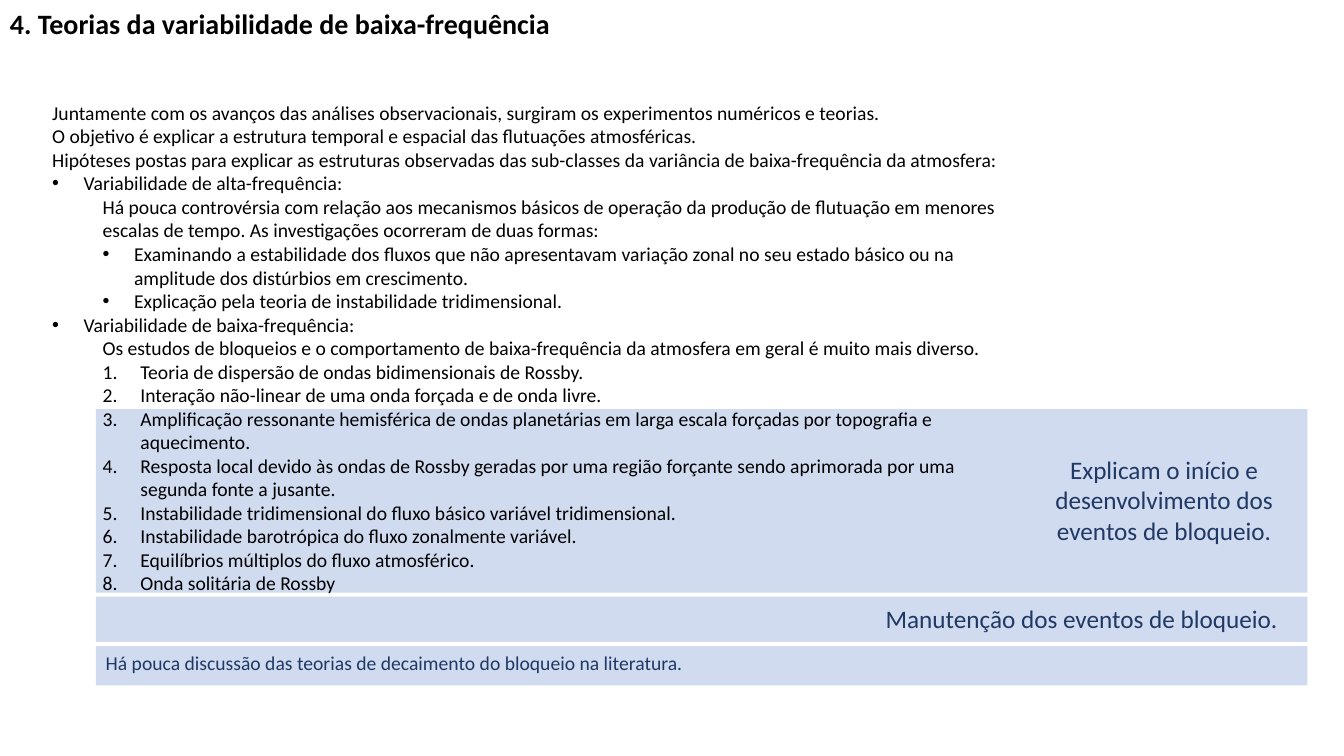
from lxml import etree
from pptx import Presentation
from pptx.dml.color import RGBColor
from pptx.enum.shapes import MSO_SHAPE
from pptx.enum.text import MSO_AUTO_SIZE, PP_ALIGN
from pptx.oxml.ns import qn
from pptx.util import Pt

RECTANGLE = MSO_SHAPE.RECTANGLE
LEFT, CENTER = PP_ALIGN.LEFT, PP_ALIGN.CENTER
BLACK = RGBColor(0x00, 0x00, 0x00)
NAVY = RGBColor(0x20, 0x38, 0x64)
BLUE = RGBColor(0x44, 0x72, 0xC4)
FONT = "Calibri"
BAND_OPACITY = 25

TITLE = "4. Teorias da variabilidade de baixa-frequência"

# Paragraph style: (level, left margin, hanging indent, bullet)
STYLES = {
    "plain": (0, 0, 0, None),
    "topic": (0, 22.5, 22.5, "•"),
    "detail": (1, 36, 0, None),
    "point": (1, 58.5, 22.5, "•"),
    "theory": (1, 63, 27, "number"),
}

BODY = [
    ("plain", "Juntamente com os avanços das análises observacionais, surgiram os experimentos numéricos e teorias."),
    ("plain", "O objetivo é explicar a estrutura temporal e espacial das flutuações atmosféricas."),
    ("plain", "Hipóteses postas para explicar as estruturas observadas das sub-classes da variância de "
              "baixa-frequência da atmosfera:"),
    ("topic", "Variabilidade de alta-frequência:"),
    ("detail", "Há pouca controvérsia com relação aos mecanismos básicos de operação da produção de flutuação "
               "em menores escalas de tempo. As investigações ocorreram de duas formas:"),
    ("point", "Examinando a estabilidade dos fluxos que não apresentavam variação zonal no seu estado básico "
              "ou na amplitude dos distúrbios em crescimento."),
    ("point", "Explicação pela teoria de instabilidade tridimensional."),
    ("topic", "Variabilidade de baixa-frequência:"),
    ("detail", "Os estudos de bloqueios e o comportamento de baixa-frequência da atmosfera em geral é muito "
               "mais diverso."),
    ("theory", "Teoria de dispersão de ondas bidimensionais de Rossby."),
    ("theory", "Interação não-linear de uma onda forçada e de onda livre."),
    ("theory", "Amplificação ressonante hemisférica de ondas planetárias em larga escala forçadas por "
               "topografia e aquecimento."),
    ("theory", "Resposta local devido às ondas de Rossby geradas por uma região forçante sendo aprimorada "
               "por uma segunda fonte a jusante."),
    ("theory", "Instabilidade tridimensional do fluxo básico variável tridimensional."),
    ("theory", "Instabilidade barotrópica do fluxo zonalmente variável."),
    ("theory", "Equilíbrios múltiplos do fluxo atmosférico."),
    ("theory", "Onda solitária de Rossby"),
]

# Highlight bands share their left edge and width: heights from top to bottom
BAND_LEFT, BAND_TOP, BAND_WIDTH, BAND_GAP = 68.4, 292.3, 865.4, 2.9
BAND_HEIGHTS = [131, 32.4, 28.1]

# Remarks: (text, box, size, alignment)
REMARKS = [
    ("Explicam o início e desenvolvimento dos eventos de bloqueio.", (725, 321.1, 213.1, 72.7), 18, CENTER),
    ("Manutenção dos eventos de bloqueio.", (600.5, 427.7, 344.2, 29.1), 18, CENTER),
    ("Há pouca discussão das teorias de decaimento do bloqueio na literatura.",
     (68.4, 461.5, 745.9, 24.5), 14, LEFT),
]


def add_band(slide, top, height):
    band = slide.shapes.add_shape(RECTANGLE, Pt(BAND_LEFT), Pt(top), Pt(BAND_WIDTH), Pt(height))
    band.shadow.inherit = False
    band.line.fill.background()
    band.fill.solid()
    band.fill.fore_color.rgb = BLUE
    color = band.fill._xPr.find(".//" + qn("a:srgbClr"))
    etree.SubElement(color, qn("a:alpha"), val=str(BAND_OPACITY * 1000))


def apply_style(paragraph, style):
    """Set level, indents and bullet or number of a paragraph."""
    level, margin, hanging, bullet = STYLES[style]
    paragraph.level = level
    properties = paragraph._p.get_or_add_pPr()
    properties.set("marL", str(Pt(margin)))
    properties.set("indent", str(-Pt(hanging)))
    if bullet == "number":
        etree.SubElement(properties, qn("a:buFont"), typeface="+mj-lt")
        etree.SubElement(properties, qn("a:buAutoNum"), type="arabicPeriod")
    elif bullet:
        etree.SubElement(properties, qn("a:buFont"), typeface="Arial")
        etree.SubElement(properties, qn("a:buChar"), char=bullet)


def add_text(slide, lines, box, size, color, alignment=LEFT, bold=False):
    """Add a text box whose lines are (style, text) pairs."""
    frame = slide.shapes.add_textbox(*map(Pt, box)).text_frame
    frame.word_wrap = True
    frame.auto_size = MSO_AUTO_SIZE.SHAPE_TO_FIT_TEXT
    for index, (style, text) in enumerate(lines):
        paragraph = frame.add_paragraph() if index else frame.paragraphs[0]
        paragraph.alignment = alignment
        apply_style(paragraph, style)
        run = paragraph.add_run()
        run.text = text
        run.font.name = FONT
        run.font.size = Pt(size)
        run.font.bold = bold
        run.font.color.rgb = color


def main():
    presentation = Presentation()
    presentation.slide_width, presentation.slide_height = Pt(960), Pt(540)
    slide = presentation.slides.add_slide(presentation.slide_layouts[6])

    top = BAND_TOP
    for height in BAND_HEIGHTS:
        add_band(slide, top, height)
        top += height + BAND_GAP

    add_text(slide, [("plain", TITLE)], (0, 1.4, 825.8, 31.5), 20, BLACK, bold=True)
    add_text(slide, BODY, (30.2, 68.4, 699.1, 397.4), 14, BLACK)
    for text, box, size, alignment in REMARKS:
        add_text(slide, [("plain", text)], box, size, NAVY, alignment)

    presentation.save("out.pptx")


if __name__ == "__main__":
    main()
